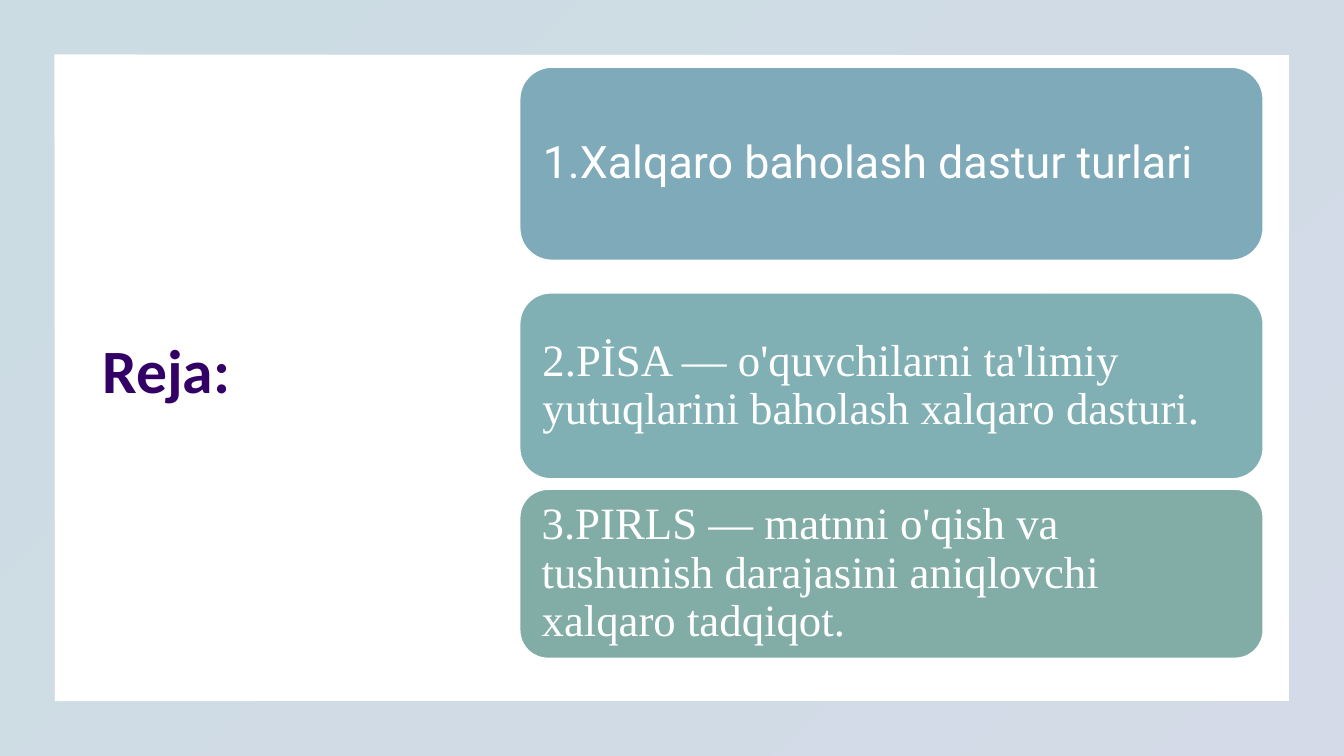
from lxml import etree
from pptx import Presentation
from pptx.dml.color import RGBColor
from pptx.enum.shapes import MSO_SHAPE
from pptx.enum.text import MSO_ANCHOR, MSO_AUTO_SIZE, PP_ALIGN
from pptx.oxml.ns import qn
from pptx.util import Emu, Pt

FRAME, CARD = MSO_SHAPE.FRAME, MSO_SHAPE.ROUNDED_RECTANGLE
MIDDLE, LEFT, FIXED = MSO_ANCHOR.MIDDLE, PP_ALIGN.LEFT, MSO_AUTO_SIZE.NONE
TITLE_ONLY = 5
EMU_PER_PX = 9525
WIDTH, HEIGHT = 1280, 720
WHITE = "FFFFFF"
CARD_INSET_LEFT, CARD_INSET_RIGHT, CARD_INSET_Y = 13, 15, 12

# top, height, fill, font, text
TOPICS = [
    (64, 184, "7FAABA", "Roboto", "1.Xalqaro baholash dastur turlari"),
    (279, 177, "80B0B3", "Times New Roman",
     "2.PİSA — o'quvchilarni ta'limiy yutuqlarini baholash xalqaro dasturi."),
    (466, 161, "82ACA6", "Times New Roman",
     "3.PIRLS — matnni o'qish va tushunish darajasini aniqlovchi xalqaro tadqiqot."),
]


def px(length):
    return Emu(length * EMU_PER_PX)


def color(value):
    return RGBColor.from_string(value)


def write(frame, text, font, size, ink, bold=False):
    frame.word_wrap = True
    frame.auto_size = FIXED
    frame.vertical_anchor = MIDDLE
    frame.text = text
    paragraph = frame.paragraphs[0]
    paragraph.alignment = LEFT
    paragraph.line_spacing = 0.9
    style = paragraph.runs[0].font
    style.name, style.size, style.bold = font, Pt(size), bold
    style.color.rgb = color(ink)


def add_border(slide, box):
    """Lay a translucent diagonal gradient frame around the box."""
    border = slide.shapes.add_shape(FRAME, *map(px, box))
    border.shadow.inherit = False
    border.adjustments[0] = 0.072
    border.line.fill.background()
    border.fill.gradient()
    border.fill.gradient_angle = 315
    for stop, (position, shade) in zip(border.fill.gradient_stops,
                                       [(0, "7FAABA"), (1, "94A4C5")]):
        stop.position = position
        stop.color.rgb = color(shade)
    for shade in border._element.spPr.iter(qn("a:srgbClr")):
        etree.SubElement(shade, qn("a:alpha"), val="40000")


def place_title(slide, box, text):
    title = slide.shapes.title
    title.left, title.top, title.width, title.height = map(px, box)
    write(title.text_frame, text, "Calibri", 44, "330066", bold=True)


def add_topic(slide, box, fill, font, text):
    card = slide.shapes.add_shape(CARD, *map(px, box))
    card.shadow.inherit = False
    card.fill.solid()
    card.fill.fore_color.rgb = color(fill)
    card.line.color.rgb = color(WHITE)
    card.line.width = Pt(1)
    frame = card.text_frame
    frame.margin_left, frame.margin_right = px(CARD_INSET_LEFT), px(CARD_INSET_RIGHT)
    frame.margin_top = frame.margin_bottom = px(CARD_INSET_Y)
    write(frame, text, font, 32, WHITE)


def add_topics(slide, left, width):
    for top, height, fill, font, text in TOPICS:
        add_topic(slide, (left, top, width, height), fill, font, text)


def main():
    deck = Presentation()
    deck.slide_width, deck.slide_height = px(WIDTH), px(HEIGHT)
    slide = deck.slides.add_slide(deck.slide_layouts[TITLE_ONLY])
    slide.background.fill.solid()
    slide.background.fill.fore_color.rgb = color(WHITE)
    add_border(slide, (0, 0, WIDTH, HEIGHT))
    place_title(slide, (88, 64, 467, 584), "Reja:")
    add_topics(slide, 495, 708)
    deck.save("out.pptx")


if __name__ == "__main__":
    main()
